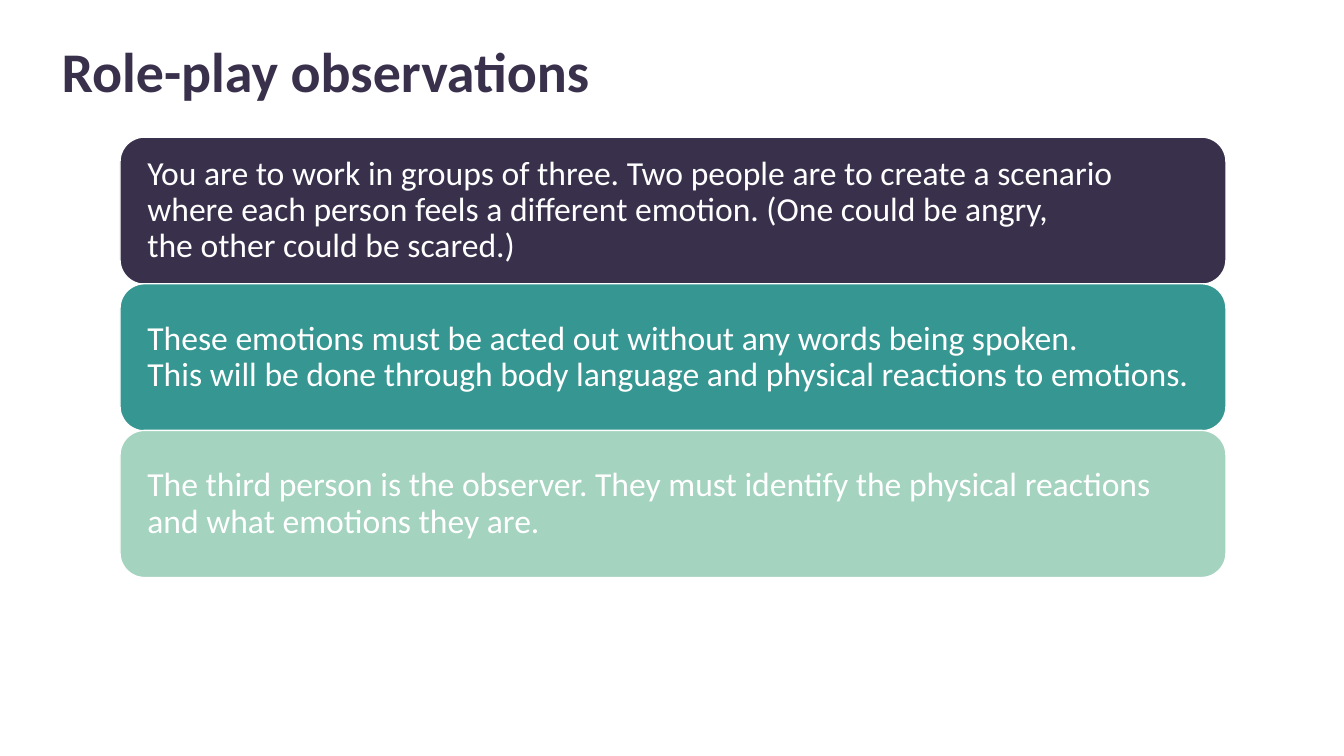
from dataclasses import dataclass

from pptx import Presentation
from pptx.dml.color import RGBColor
from pptx.enum.shapes import MSO_SHAPE
from pptx.enum.text import MSO_ANCHOR, PP_ALIGN
from pptx.slide import Slide
from pptx.text.text import _Paragraph
from pptx.util import Inches, Pt

PLUM = RGBColor(0x39, 0x30, 0x4C)
TEAL = RGBColor(0x36, 0x96, 0x91)
MINT = RGBColor(0xA4, 0xD3, 0xBF)
WHITE = RGBColor(0xFF, 0xFF, 0xFF)

SLIDE_WIDTH, SLIDE_HEIGHT = Inches(13.33), Inches(7.5)

# Steps stack, in percent of the slide's size
STEP_LEFT, STEP_WIDTH = 8.93, 82.29
FIRST_STEP_TOP, STEP_HEIGHT, STEP_PITCH = 18.13, 19.47, 19.4


@dataclass(frozen=True)
class Step:
    instruction: str
    colour: RGBColor


STEPS = [
    Step("You are to work in groups of three. Two people are to create a scenario "
         "where each person feels a different emotion. (One could be angry,\n"
         "the other could be scared.)", PLUM),
    Step("These emotions must be acted out without any words being spoken.\n"
         "This will be done through body language and physical reactions to emotions.",
         TEAL),
    Step("The third person is the observer. They must identify the physical reactions "
         "and what emotions they are.", MINT),
]


def across(percent: float) -> int:
    return round(SLIDE_WIDTH * percent / 100)


def down(percent: float) -> int:
    return round(SLIDE_HEIGHT * percent / 100)


def format_paragraph(paragraph: _Paragraph, size: int, colour: RGBColor,
                     bold: bool = False) -> None:
    paragraph.alignment = PP_ALIGN.LEFT
    paragraph.line_spacing = 0.9
    paragraph.space_before = Pt(0)
    paragraph.font.name = "Calibri"
    paragraph.font.size = Pt(size)
    paragraph.font.bold = bold
    paragraph.font.color.rgb = colour


def add_heading(slide: Slide, wording: str) -> None:
    heading = slide.shapes.title
    heading.left, heading.top = across(3.83), down(5.33)
    heading.width, heading.height = across(86.27), down(9.07)
    frame = heading.text_frame
    frame.text = wording
    frame.vertical_anchor = MSO_ANCHOR.MIDDLE
    format_paragraph(frame.paragraphs[0], 40, PLUM, bold=True)


def add_step(slide: Slide, step: Step, row: int) -> None:
    panel = slide.shapes.add_shape(
        MSO_SHAPE.ROUNDED_RECTANGLE,
        across(STEP_LEFT), down(FIRST_STEP_TOP + row * STEP_PITCH),
        across(STEP_WIDTH), down(STEP_HEIGHT))
    panel.shadow.inherit = False
    panel.fill.solid()
    panel.fill.fore_color.rgb = step.colour
    panel.line.color.rgb = WHITE
    panel.line.width = Pt(1)

    frame = panel.text_frame
    frame.word_wrap = True
    frame.vertical_anchor = MSO_ANCHOR.MIDDLE
    frame.margin_left = frame.margin_right = Inches(0.2)
    frame.margin_top = frame.margin_bottom = Inches(0.2)
    instruction = frame.paragraphs[0]
    instruction.text = step.instruction
    format_paragraph(instruction, 24, WHITE)


def main() -> None:
    presentation = Presentation()
    presentation.slide_width = SLIDE_WIDTH
    presentation.slide_height = SLIDE_HEIGHT
    title_only = presentation.slide_layouts[5]
    slide = presentation.slides.add_slide(title_only)

    # Title
    add_heading(slide, "Role-play observations")

    # Stacked instructions
    for row, step in enumerate(STEPS):
        add_step(slide, step, row)

    presentation.save("out.pptx")


if __name__ == "__main__":
    main()
